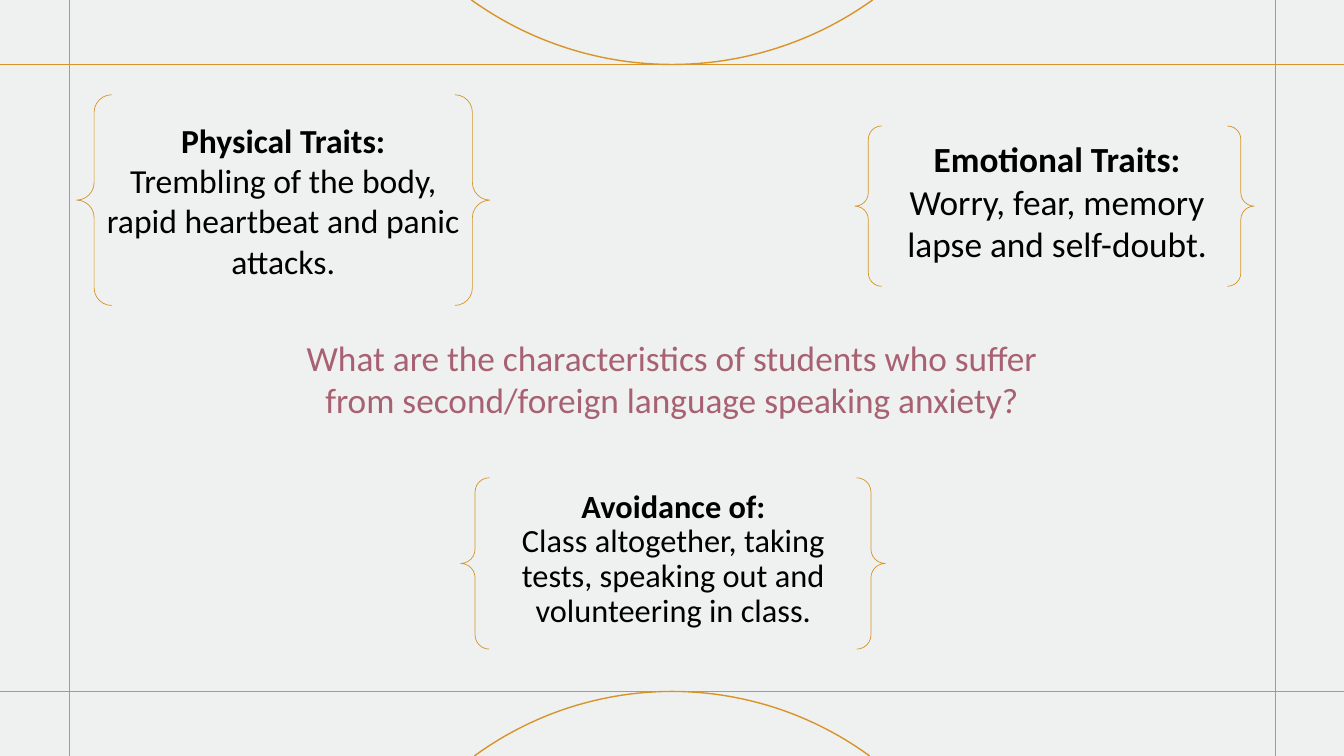
import math

from lxml import etree
from pptx import Presentation
from pptx.dml.color import RGBColor
from pptx.enum.shapes import MSO_CONNECTOR, MSO_SHAPE
from pptx.enum.text import MSO_ANCHOR, PP_ALIGN
from pptx.oxml.ns import qn
from pptx.util import Inches, Pt

STRAIGHT = MSO_CONNECTOR.STRAIGHT
BRACES = MSO_SHAPE.DOUBLE_BRACE
MIDDLE = MSO_ANCHOR.MIDDLE
CENTER = PP_ALIGN.CENTER

COLORS = {"back": "EEF1EF", "gold": "D89429", "rose": "A86172", "text": "000000"}
FONT = "Calibri"
WIDTH, HEIGHT = 13.33, 7.5
LEFT, RIGHT, TOP, BOTTOM = 0.69, 12.65, 0.64, 6.86

QUESTION = ("What are the characteristics of students who suffer "
            "from second/foreign language speaking anxiety?")

# heading, body, text box, brace box, font size, line spacing
TRAITS = [
    ("Physical Traits:", "Trembling of the body, rapid heartbeat and panic attacks.",
     (0.88, 1.26, 3.86, 1.45), (0.76, 0.94, 4.1, 2.09), 24, 1.0),
    ("Emotional Traits:", "Worry, fear, memory lapse and self-doubt.",
     (8.69, 1.15, 3.59, 1.69), (8.48, 1.25, 3.96, 1.59), 25.2, 1.0),
    ("Avoidance of:",
     "Class altogether, taking tests, speaking out and volunteering in class.",
     (4.86, 4.75, 3.64, 1.61), (4.57, 4.74, 4.21, 1.7), 23.1, 0.9),
]


def rgb(name):
    return RGBColor.from_string(COLORS[name])


def set_outline(sp, width):
    sp.line.color.rgb = rgb("gold")
    sp.line.width = Pt(width)


def add_line(s, x1, y1, x2, y2):
    line = s.shapes.add_connector(STRAIGHT, *map(Inches, (x1, y1, x2, y2)))
    set_outline(line, 1)
    etree.SubElement(line._element.spPr, qn("a:effectLst"))


def add_arc(s, edge_y, tangent_y, half_chord, steps=48):
    """Circular arc from the slide edge that touches a frame line at its middle."""
    depth = tangent_y - edge_y
    radius = (half_chord ** 2 + depth ** 2) / (2 * abs(depth))
    center_y = tangent_y - math.copysign(radius, depth)
    sweep = math.asin(half_chord / radius)
    points = []
    for i in range(steps + 1):
        angle = sweep * (2 * i / steps - 1)
        x = WIDTH / 2 + radius * math.sin(angle)
        y = center_y + math.copysign(radius, depth) * math.cos(angle)
        points.append((Inches(x), Inches(y)))
    builder = s.shapes.build_freeform(*points[0])
    builder.add_line_segments(points[1:], close=False)
    sp = builder.convert_to_shape()
    sp.shadow.inherit = False
    sp.fill.background()
    set_outline(sp, 1)


def add_text(s, box, paragraphs, size, color, spacing=1.0):
    """Paragraphs are (text, bold) pairs."""
    tf = s.shapes.add_textbox(*map(Inches, box)).text_frame
    tf.word_wrap = True
    tf.vertical_anchor = MIDDLE
    for i, (text, bold) in enumerate(paragraphs):
        p = tf.paragraphs[0] if i == 0 else tf.add_paragraph()
        p.alignment = CENTER
        p.line_spacing = spacing
        r = p.add_run()
        r.text = text
        for key, value in {"name": FONT, "size": Pt(size), "bold": bold}.items():
            setattr(r.font, key, value)
        r.font.color.rgb = rgb(color)


def add_braces(s, box):
    sp = s.shapes.add_shape(BRACES, *map(Inches, box))
    sp.shadow.inherit = False
    sp.fill.background()
    set_outline(sp, 0.5)


def main():
    prs = Presentation()
    prs.slide_width, prs.slide_height = Inches(WIDTH), Inches(HEIGHT)
    s = prs.slides.add_slide(prs.slide_layouts[6])

    # Background and frame
    s.background.fill.solid()
    s.background.fill.fore_color.rgb = rgb("back")
    for y in (BOTTOM, TOP):
        add_line(s, 0, y, WIDTH, y)
    for x in (RIGHT, LEFT):
        add_line(s, x, HEIGHT, x, 0)
    add_arc(s, 0, TOP, 1.99)
    add_arc(s, HEIGHT, BOTTOM, 1.96)

    # Question
    add_text(s, (2.85, 3.03, 7.63, 1.45), [(QUESTION, False)], 25.2, "rose")

    # Traits in braces
    for heading, body, text_box, brace_box, size, spacing in TRAITS:
        add_text(s, text_box, [(heading, True), (body, False)], size, "text", spacing)
        add_braces(s, brace_box)

    prs.save("out.pptx")


if __name__ == "__main__":
    main()
